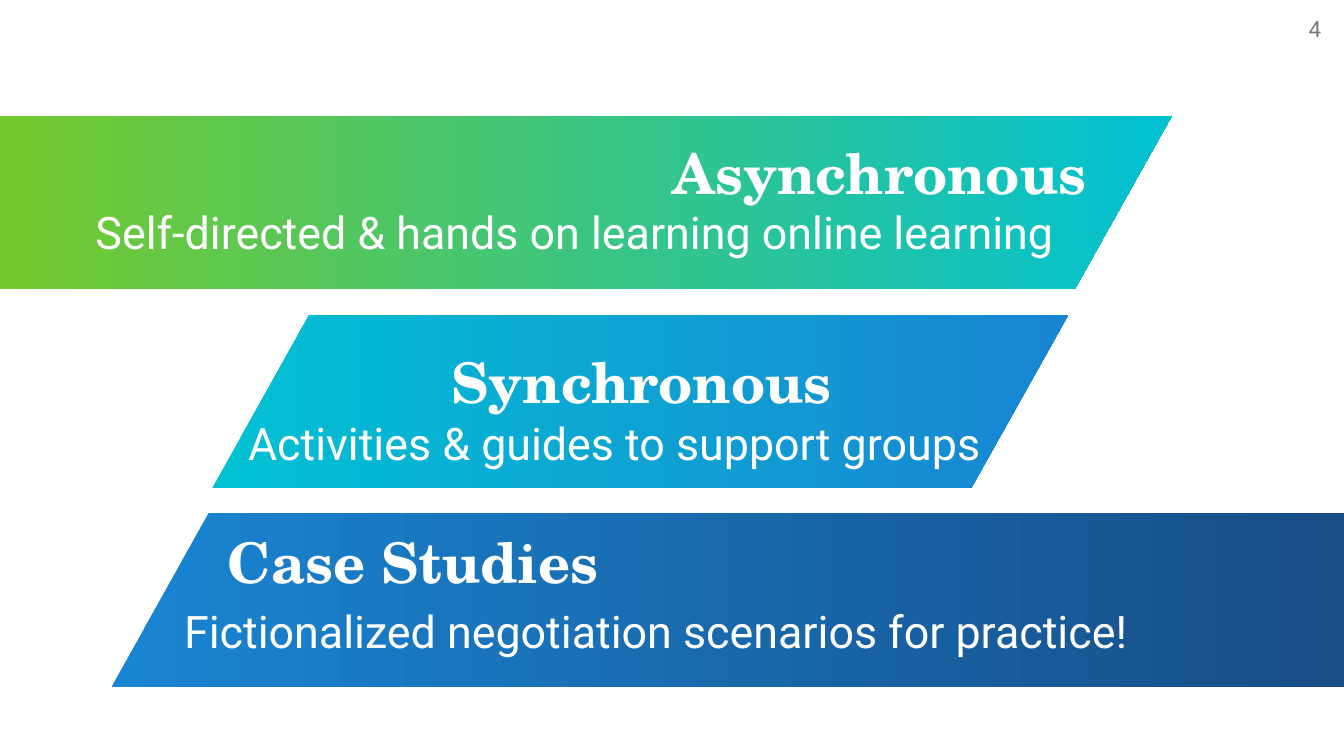
import pptx
import pptx.dml.color
import pptx.enum.shapes
import pptx.enum.text
import pptx.util

RGBColor = pptx.dml.color.RGBColor
Align = pptx.enum.text.PP_ALIGN
Anchor = pptx.enum.text.MSO_ANCHOR
Inches = pptx.util.Inches

WHITE = RGBColor(0xFF, 0xFF, 0xFF)
GRAY = RGBColor(0x75, 0x7C, 0x83)
LIME = RGBColor(0x7F, 0xCA, 0x20)
CYAN = RGBColor(0x02, 0xC1, 0xD3)
BLUE = RGBColor(0x19, 0x85, 0xD2)
NAVY = RGBColor(0x18, 0x48, 0x80)

SLIDE_WIDTH = 10
SLIDE_HEIGHT = SLIDE_WIDTH * 9 / 16
BAND_TOP, BAND_HEIGHT, BAND_PITCH = 0.86, 1.29, 1.48
BAND_SLANT = 0.56
HEADING_WIDTH = 3.63
DETAIL_HEIGHT = 0.57

# Heading and detail boxes are (left, offset from band top, size):
# the size is a height for headings and a width for details.
BANDS = [
    dict(left=-0.73, width=9.45, colors=(LIME, CYAN),
         heading="Asynchronous", heading_box=(4.73, 0.21, 0.48),
         detail="Self-directed & hands on learning online learning",
         detail_box=(0.11, 0.6, 8.33), detail_align=Align.CENTER),
    dict(left=1.58, width=6.37, colors=(CYAN, BLUE),
         heading="Synchronous", heading_box=(2.96, 0.24, 0.57),
         detail="Activities & guides to support groups",
         detail_box=(1.83, 0.69, 5.48), detail_align=Align.CENTER),
    dict(left=0.83, width=9.91, colors=(BLUE, NAVY),
         heading="Case Studies", heading_box=(1.26, 0.19, 0.39),
         detail="Fictionalized negotiation scenarios for practice!",
         detail_box=(1.37, 0.61, 8.46), detail_align=Align.LEFT),
]


def add_text(slide, text, left, top, width, height, *, size, font="Roboto",
             color=WHITE, bold=False, align=Align.CENTER, anchor=Anchor.MIDDLE,
             line_spacing=1.0, space_before=0):
    frame = slide.shapes.add_textbox(
        Inches(left), Inches(top), Inches(width), Inches(height)).text_frame
    frame.word_wrap = True
    frame.vertical_anchor = anchor
    frame.margin_left = frame.margin_right = 0
    frame.margin_top = frame.margin_bottom = 0
    paragraph = frame.paragraphs[0]
    paragraph.alignment = align
    paragraph.line_spacing = line_spacing
    paragraph.space_before = pptx.util.Pt(space_before)
    run = paragraph.add_run()
    run.text = text
    run.font.name = font
    run.font.size = pptx.util.Pt(size)
    run.font.bold = bold
    run.font.color.rgb = color


def add_band(slide, left, top, width, colors):
    """Draw a slanted band whose colours blend from left to right."""
    band = slide.shapes.add_shape(
        pptx.enum.shapes.MSO_SHAPE.PARALLELOGRAM,
        Inches(left), Inches(top), Inches(width), Inches(BAND_HEIGHT))
    band.adjustments[0] = BAND_SLANT
    band.shadow.inherit = False
    band.line.fill.background()
    band.fill.gradient()
    band.fill.gradient_angle = 0
    for stop, color in zip(band.fill.gradient_stops, colors):
        stop.color.rgb = color


def add_band_text(slide, band, top):
    left, offset, height = band["heading_box"]
    add_text(slide, band["heading"], left, top + offset, HEADING_WIDTH, height,
             size=30, font="TeX Gyre Schola", bold=True, line_spacing=0.9)
    left, offset, width = band["detail_box"]
    add_text(slide, band["detail"], left, top + offset, width, DETAIL_HEIGHT,
             size=24, align=band["detail_align"], anchor=Anchor.TOP,
             line_spacing=1.15, space_before=6)


def main():
    deck = pptx.Presentation()
    deck.slide_width = Inches(SLIDE_WIDTH)
    deck.slide_height = Inches(SLIDE_HEIGHT)
    slide = deck.slides.add_slide(deck.slide_layouts[6])
    for row, band in enumerate(BANDS):
        top = BAND_TOP + row * BAND_PITCH
        add_band(slide, band["left"], top, band["width"], band["colors"])
        add_band_text(slide, band, top)
    add_text(slide, "4", 9.36, 0, 0.47, 0.43,
             size=12, color=GRAY, align=Align.RIGHT)
    deck.save("out.pptx")


if __name__ == "__main__":
    main()
